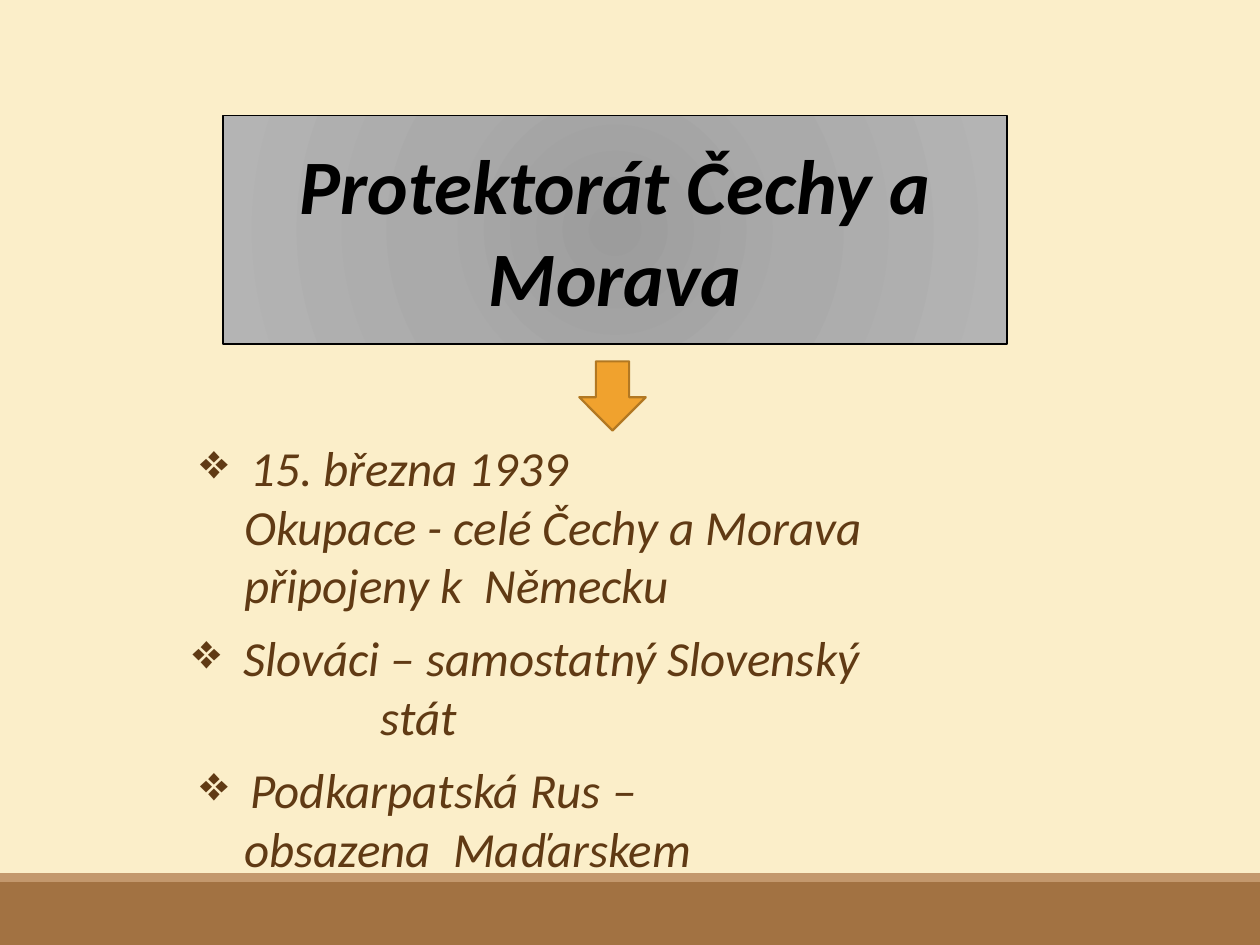
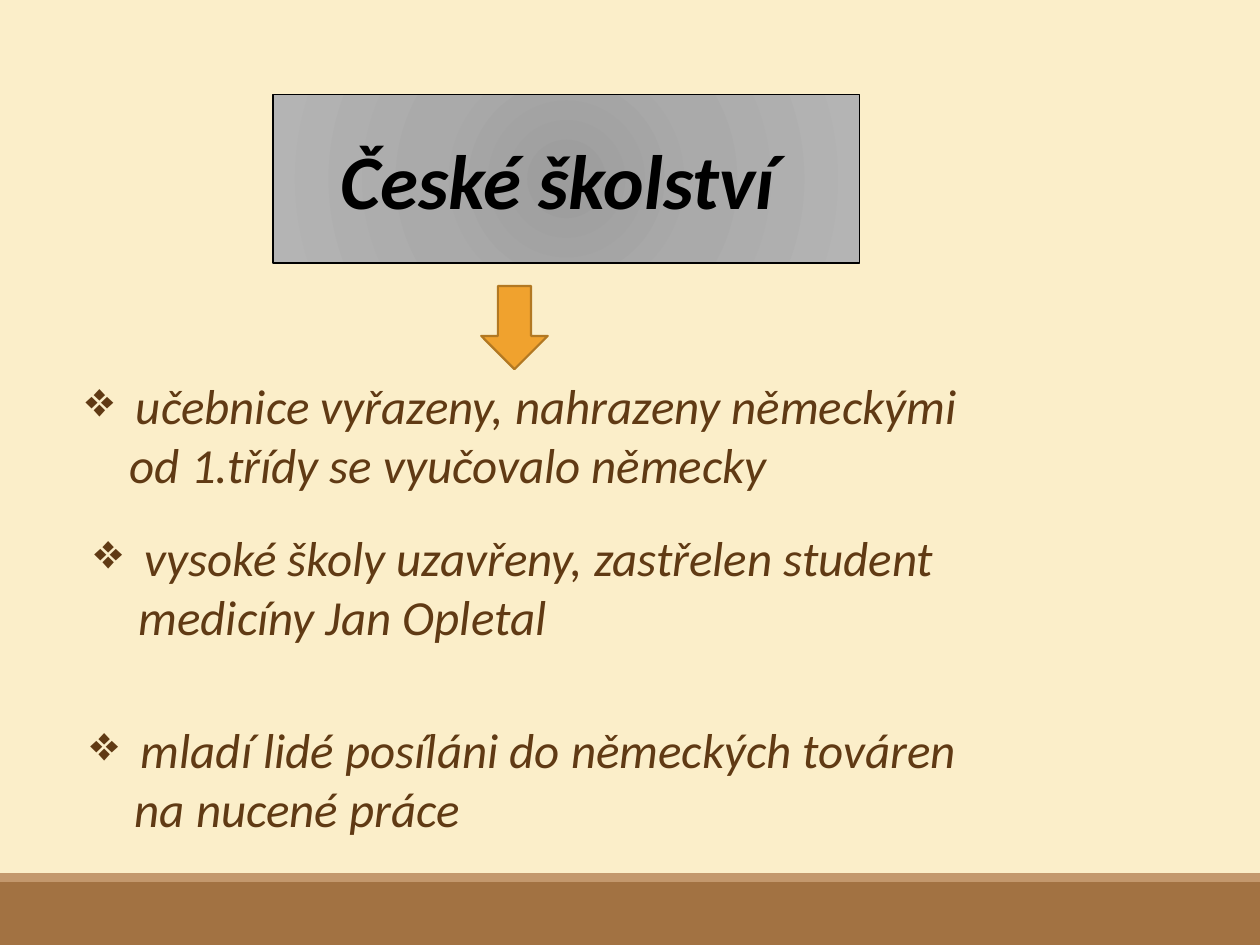
from pptx import Presentation
from pptx.dml.color import RGBColor
from pptx.enum.shapes import MSO_SHAPE
from pptx.enum.text import MSO_ANCHOR, MSO_AUTO_SIZE, PP_ALIGN
from pptx.oxml import parse_xml
from pptx.oxml.ns import nsdecls
from pptx.util import Pt

RECTANGLE, DOWN_ARROW = MSO_SHAPE.RECTANGLE, MSO_SHAPE.DOWN_ARROW
MIDDLE, CENTER = MSO_ANCHOR.MIDDLE, PP_ALIGN.CENTER
FIXED_SIZE, GROW = MSO_AUTO_SIZE.NONE, MSO_AUTO_SIZE.SHAPE_TO_FIT_TEXT
TITLE_ONLY = 5
WIDTH, HEIGHT = 720, 540
BAND_TOP, STRIPE_HEIGHT = 504, 5
ARROW_WIDTH = 38
BULLET_INDENT, LINE_INDENT, DEEP_INDENT = 28.8, 25.3, 107.6


def color(value):
    """Turn a hex string into a colour."""
    return RGBColor.from_string(value)


class Style:
    """Hold the shared look and the current slide."""

    font = "Calibri"
    background, band_fill, stripe_fill = "FBEEC9", "A27242", "C3986D"
    title_color, text_color = "000000", "603A14"
    arrow_fill, arrow_line = "F0A22E", "B27822"
    title_stops = ((0, "9C9C9C"), (45, "AAAAAA"), (100, "B4B4B4"))

    def __init__(self, deck):
        """Set the background of the master."""
        self.deck = deck
        self.page = None
        fill = deck.slide_master.background.fill
        fill.solid()
        fill.fore_color.rgb = color(self.background)

    def new_page(self):
        """Start a slide with a title."""
        self.page = self.deck.slides.add_slide(self.deck.slide_layouts[TITLE_ONLY])

    def format_runs(self, para, size, text_color, bold=False):
        """Format every run of a paragraph."""
        for span in para.runs:
            font = span.font
            font.name, font.size = self.font, Pt(size)
            font.bold, font.italic = bold, True
            font.color.rgb = color(text_color)

    def shape(self, kind, left, top, width, height, fill):
        """Draw a flat filled shape without an outline."""
        box = self.page.shapes.add_shape(kind, Pt(left), Pt(top), Pt(width), Pt(height))
        box.shadow.inherit = False
        box.fill.solid()
        box.fill.fore_color.rgb = color(fill)
        box.line.fill.background()
        return box

    def master_band(self, top, height, fill):
        """Put a full-width band on the master."""
        band = self.shape(RECTANGLE, 0, top, WIDTH, height, fill)
        self.deck.slide_master.shapes.element.append(band.element)

    def arrow(self, left, top, height):
        """Draw an arrow pointing down to the list."""
        arrow = self.shape(DOWN_ARROW, left, top, ARROW_WIDTH, height, self.arrow_fill)
        arrow.line.color.rgb = color(self.arrow_line)
        arrow.line.width = Pt(1.25)

    def title(self, text, left, top, width, height):
        """Turn the title placeholder into a rounded gradient box."""
        box = self.page.shapes.title
        box.left, box.top, box.width, box.height = Pt(left), Pt(top), Pt(width), Pt(height)
        stops = "".join(
            f'<a:gs pos="{place * 1000}"><a:srgbClr val="{value}"/></a:gs>'
            for place, value in self.title_stops)
        properties = box.element.spPr
        properties.append(parse_xml(
            f'<a:prstGeom {nsdecls("a")} prst="roundRect"><a:avLst/></a:prstGeom>'))
        properties.append(parse_xml(
            f'<a:gradFill {nsdecls("a")}><a:gsLst>{stops}</a:gsLst><a:path path="circle">'
            '<a:fillToRect l="100000" t="100000" r="100000" b="100000"/>'
            '</a:path></a:gradFill>'))
        box.line.color.rgb = color(self.title_color)
        box.line.width = Pt(1)
        frame = box.text_frame
        frame.text = text
        frame.auto_size, frame.vertical_anchor = FIXED_SIZE, MIDDLE
        para = frame.paragraphs[0]
        para.alignment = CENTER
        self.format_runs(para, 44, self.title_color, bold=True)

    def bullet(self, lines, left, top, width, height=75, indent=LINE_INDENT):
        """Write a bulleted line followed by indented lines."""
        box = self.page.shapes.add_textbox(Pt(left), Pt(top), Pt(width), Pt(height))
        frame = box.text_frame
        frame.word_wrap, frame.auto_size = True, GROW
        frame.text = "\n".join(lines)
        for number, para in enumerate(frame.paragraphs):
            properties = para._p.get_or_add_pPr()
            properties.set("marL", str(Pt(indent if number else BULLET_INDENT)))
            properties.set("indent", str(0 if number else -Pt(BULLET_INDENT)))
            if number == 0:
                properties.append(parse_xml(f'<a:buChar {nsdecls("a")} char="❖"/>'))
            self.format_runs(para, 28, self.text_color)


def main():
    """Build both slides and save the deck."""
    deck = Presentation()
    deck.slide_width, deck.slide_height = Pt(WIDTH), Pt(HEIGHT)
    style = Style(deck)

    style.new_page()
    style.master_band(BAND_TOP, HEIGHT - BAND_TOP, style.band_fill)
    style.master_band(BAND_TOP - STRIPE_HEIGHT, STRIPE_HEIGHT, style.stripe_fill)
    style.title("Protektorát Čechy a Morava", 127.5, 66, 448, 130.5)
    style.arrow(331, 206.5, 39.5)
    style.bullet(["15. března 1939", "Okupace - celé Čechy a Morava",
                  "připojeny k  Německu"], 107.3, 246.3, 512.6, 108.7)
    style.bullet(["Slováci – samostatný Slovenský", "stát"],
                 103, 355, 521.3, indent=DEEP_INDENT)
    style.bullet(["Podkarpatská Rus –", "obsazena  Maďarskem"], 107.3, 430.5, 371.5)

    style.new_page()
    style.title("České školství ", 156.2, 54, 335, 96.5)
    style.bullet(["učebnice vyřazeny, nahrazeny německými",
                  "od 1.třídy se vyučovalo německy"], 41.8, 211, 653.8)
    style.arrow(275, 163.5, 47.5)
    style.bullet(["vysoké školy uzavřeny, zastřelen student",
                  "medicíny Jan Opletal"], 46.8, 298, 501.8)
    style.bullet(["mladí lidé posíláni do německých továren",
                  "na nucené práce"], 44.6, 407.5, 638)

    deck.save("out.pptx")


if __name__ == "__main__":
    main()
